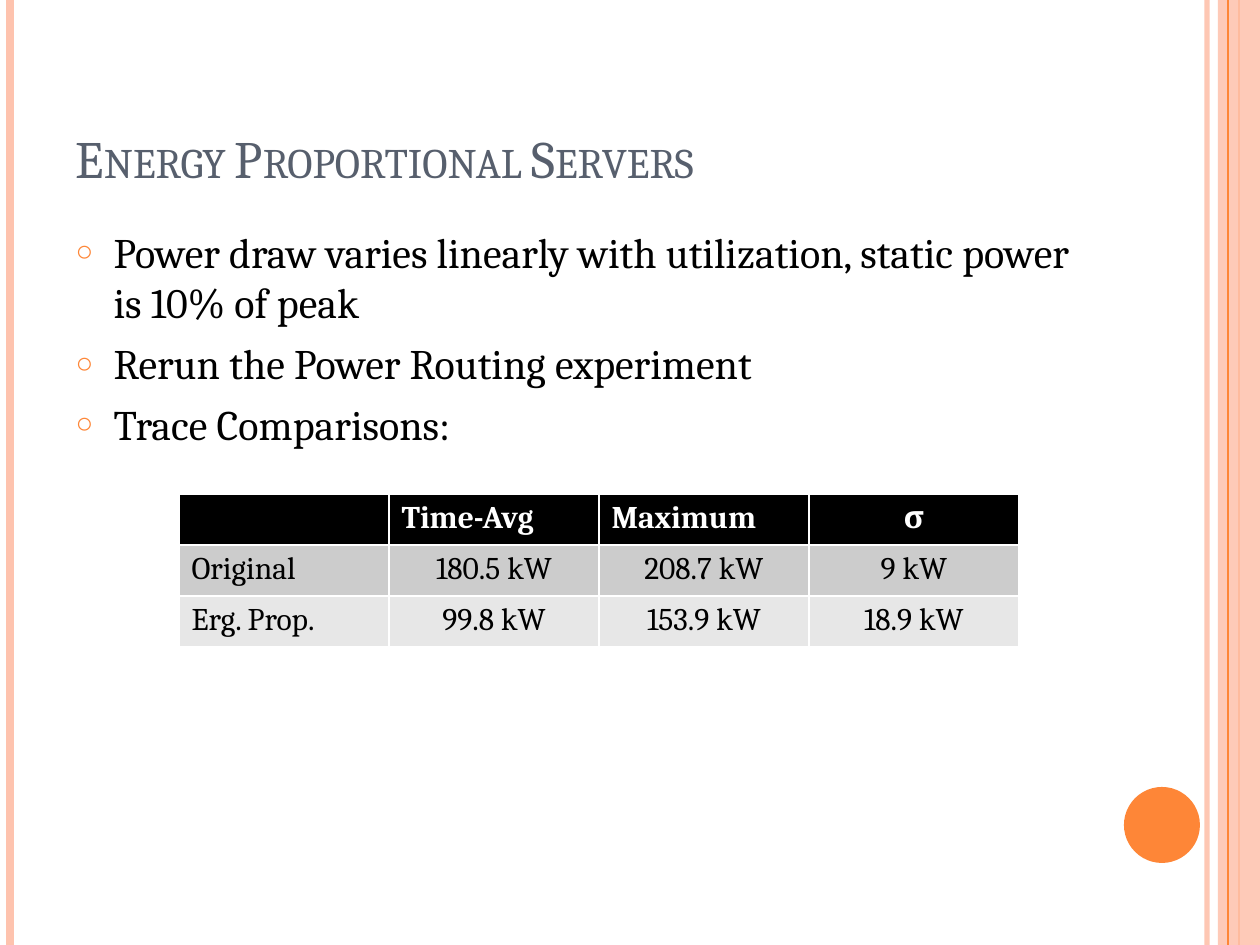
"""Build the slide on energy proportional servers."""
from lxml import etree
from pptx import Presentation
from pptx.dml.color import RGBColor
from pptx.enum.shapes import MSO_CONNECTOR, MSO_SHAPE
from pptx.enum.text import MSO_ANCHOR, MSO_AUTO_SIZE, PP_ALIGN
from pptx.oxml.ns import qn
from pptx.util import Emu, Pt

STRAIGHT = MSO_CONNECTOR.STRAIGHT
RECTANGLE, OVAL = MSO_SHAPE.RECTANGLE, MSO_SHAPE.OVAL
BOTTOM, NO_FIT = MSO_ANCHOR.BOTTOM, MSO_AUTO_SIZE.NONE
LEFT, CENTER = PP_ALIGN.LEFT, PP_ALIGN.CENTER
FONT = "Cambria"
COLORS = {
    "orange": "FE8637", "peach": "FEC3AE", "slate": "575F6D",
    "black": "000000", "white": "FFFFFF",
    "dark band": "CCCCCC", "light band": "E7E7E7",
}


def px(*lengths):
    return [Emu(round(length * 914400 / 126)) for length in lengths]


def style(para, size, color, bold=False):
    para.font.name, para.font.size, para.font.bold = FONT, Pt(size), bold
    para.font.color.rgb = RGBColor.from_string(COLORS[color])


deck = Presentation()
deck.slide_width, deck.slide_height = px(1260, 945)
page = deck.slides.add_slide(deck.slide_layouts[1])
title, body = page.placeholders

STRIPES = [
    ("line", 1207, "peach", 3, 93),
    ("line", 10, "peach", 4.5, 100),
    ("line", 1239, "orange", 1.5, 100),
    ("band", 1218, "peach", 42, 87),
    ("line", 1228, "orange", 0.75, 100),
]
for kind, x, color, width, opacity in STRIPES:
    if kind == "line":
        stripe = page.shapes.add_connector(STRAIGHT, *px(x, 0, x, 945))
        stripe.line.width = Pt(width)
        paint = stripe.line.fill
        etree.SubElement(stripe._element.spPr, qn("a:effectLst"))
    else:
        stripe = page.shapes.add_shape(RECTANGLE, *px(x, 0, width, 945))
        stripe.shadow.inherit = False
        stripe.line.fill.background()
        paint = stripe.fill
    paint.solid()
    paint.fore_color.rgb = RGBColor.from_string(COLORS[color])
    if opacity < 100:
        tone = next(stripe._element.spPr.iter(qn("a:srgbClr")))
        etree.SubElement(tone, qn("a:alpha"), val=str(opacity * 1000))

disc = page.shapes.add_shape(OVAL, *px(1124, 787, 76, 76))
disc.shadow.inherit = False
disc.line.fill.background()
disc.fill.solid()
disc.fill.fore_color.rgb = RGBColor.from_string(COLORS["orange"])

title.left, title.top, title.width, title.height = px(63, 38, 1029, 157)
title.text_frame.text = "Energy Proportional Servers"
title.text_frame.vertical_anchor = BOTTOM
title.text_frame.auto_size = NO_FIT
heading = title.text_frame.paragraphs[0]
heading.alignment = LEFT
style(heading, 30, "slate")
heading.runs[0]._r.get_or_add_rPr().set("cap", "small")

body.left, body.top, body.width, body.height = px(63, 220, 1029, 672)
body.text_frame.text = "\n".join([
    "Power draw varies linearly with utilization, static power is 10% of peak",
    "Rerun the Power Routing experiment",
    "Trace Comparisons:",
])
body.text_frame.auto_size = NO_FIT
indent = px(38)[0]
for para in body.text_frame.paragraphs:
    props = para._p.get_or_add_pPr()
    props.set("marL", str(indent))
    props.set("indent", str(-indent))
    bullet_color = etree.SubElement(props, qn("a:buClr"))
    etree.SubElement(bullet_color, qn("a:srgbClr"), val=COLORS["orange"])
    etree.SubElement(props, qn("a:buSzPct"), val="70000")
    etree.SubElement(props, qn("a:buChar"), char="○")
    para.space_before = Pt(6)
    style(para, 24, "black")

ROWS = [
    ("black", "white", ["", "Time-Avg", "Maximum", "σ"]),
    ("dark band", "black", ["Original", "180.5 kW", "208.7 kW", "9 kW"]),
    ("light band", "black", ["Erg. Prop.", "99.8 kW", "153.9 kW", "18.9 kW"]),
]
table = page.shapes.add_table(3, 4, *px(179, 494, 840, 153)).table
for row, (fill, ink, values) in enumerate(ROWS):
    for column, value in enumerate(values):
        cell = table.cell(row, column)
        cell.text = value
        cell.fill.solid()
        cell.fill.fore_color.rgb = RGBColor.from_string(COLORS[fill])
        para = cell.text_frame.paragraphs[0]
        centered = column == 3 or (row > 0 and column > 0)
        para.alignment = CENTER if centered else LEFT
        style(para, 18, ink, bold=row == 0)

deck.save("out.pptx")
